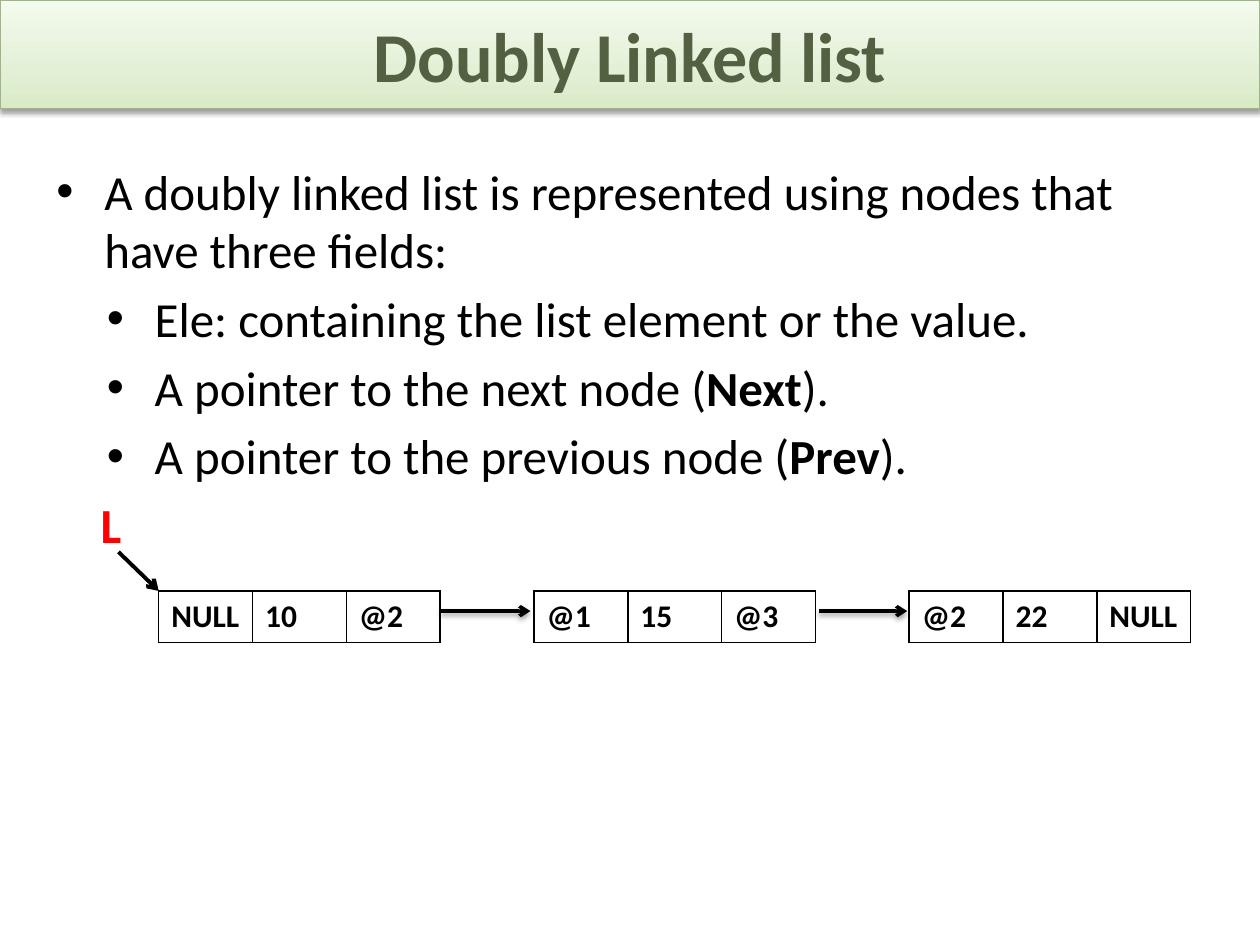
from copy import deepcopy
from lxml.etree import SubElement as Sub
from pptx import Presentation
from pptx.dml.color import RGBColor as RGB
from pptx.enum.shapes import MSO_CONNECTOR as Conn, MSO_SHAPE as Shape
from pptx.enum.text import MSO_ANCHOR as Anchor, PP_ALIGN as Align
from pptx.oxml.ns import qn
from pptx.util import Inches, Pt

BLACK = RGB(0, 0, 0)
RED = RGB(0xFF, 0, 0)
OLIVE = RGB(0x53, 0x61, 0x42)
EDGE = RGB(0xA1, 0xB2, 0x8E)
STOPS = [
    (0, RGB(0xD9, 0xEA, 0xC6)),
    (0.35, RGB(0xE3, 0xF0, 0xD6)),
    (1, RGB(0xF4, 0xFA, 0xEF)),
]
BASE = {"name": "Calibri", "size": Pt(28), "bold": False}
BOLD = {"bold": True}
HEAD = {"size": Pt(40), "bold": True}
CELL = {"size": Pt(18), "bold": True}

POINTS = [
    (0.38, [("A doubly linked list is represented using nodes that have three fields:", {})]),
    (0.78, [("Ele: containing the list element or the value.", {})]),
    (0.78, [("A pointer to the next node (", {}), ("Next", BOLD), (").", {})]),
    (0.78, [("A pointer to the previous node (", {}), ("Prev", BOLD), (").", {})]),
]
NODES = [("NULL", "10", "@2"), ("@1", "15", "@3"), ("@2", "22", "NULL")]


def style(font, form, color=BLACK):
    for key, value in {**BASE, **form}.items():
        setattr(font, key, value)
    font.color.rgb = color


def write(para, text, form, color=BLACK):
    run = para.add_run()
    run.text = text
    style(run.font, form, color)


def add_shade(props):
    effects = props.find(qn("a:effectLst"))
    shade = Sub(effects, qn("a:outerShdw"), blurRad=str(Pt(3.1)),
                dist=str(Pt(1.6)), dir="5400000", rotWithShape="0")
    tint = Sub(shade, qn("a:srgbClr"), val=str(BLACK))
    Sub(tint, qn("a:alpha"), val="38000")


def fill_fade(shape):
    shape.fill.gradient()
    shape.fill.gradient_angle = 90
    stops = shape._element.spPr.find(".//" + qn("a:gsLst"))
    stops.append(deepcopy(stops[-1]))
    for stop, (place, color) in zip(shape.fill.gradient_stops, STOPS):
        stop.position = place
        stop.color.rgb = color


def add_title(slide):
    bar = slide.shapes.add_shape(Shape.RECTANGLE, 0, 0, Inches(10), Inches(0.86))
    fill_fade(bar)
    bar.line.color.rgb = EDGE
    bar.line.width = Pt(0.75)
    bar.shadow.inherit = False
    add_shade(bar._element.spPr)
    frame = bar.text_frame
    frame.vertical_anchor = Anchor.MIDDLE
    para = frame.paragraphs[0]
    para.alignment = Align.CENTER
    write(para, "Doubly Linked list", HEAD, OLIVE)


def add_body(slide):
    box = slide.shapes.add_textbox(Inches(0.35), Inches(1.23), Inches(9.3), Inches(6.17))
    frame = box.text_frame
    frame.word_wrap = True
    for i, (left, parts) in enumerate(POINTS):
        para = frame.add_paragraph() if i else frame.paragraphs[0]
        props = para._p.get_or_add_pPr()
        props.set("marL", str(Inches(left)))
        props.set("indent", str(Inches(-0.38)))
        para.space_before = Pt(5.6 if i else 0)
        Sub(props, qn("a:buFont"), typeface="Arial")
        Sub(props, qn("a:buChar"), char="•")
        for text, form in parts:
            write(para, text, form)
    para = frame.add_paragraph()
    para._p.get_or_add_pPr().set("marL", str(Inches(0.35)))
    para.space_before = Pt(5.6)
    write(para, "L", BOLD, RED)


def set_edges(cell, sides):
    props = cell._tc.get_or_add_tcPr()
    for side in "LRTB":
        line = Sub(props, qn("a:ln" + side), w=str(Pt(1)))
        if side in sides:
            Sub(Sub(line, qn("a:solidFill")), qn("a:srgbClr"), val=str(BLACK))
        else:
            Sub(line, qn("a:noFill"))


def add_nodes(slide):
    texts = [*NODES[0]]
    for node in NODES[1:]:
        texts += ["", *node]
    table = slide.shapes.add_table(
        1, len(texts), Inches(1.26), Inches(4.69), Inches(8.19), Inches(0.41)).table
    table.first_row = table.horz_banding = False
    for cell, text in zip(table.rows[0].cells, texts):
        set_edges(cell, "LRTB" if text else "LR")
        cell.fill.background()
        para = cell.text_frame.paragraphs[0]
        if text:
            write(para, text, CELL)
        else:
            style(para.font, CELL)


def add_arrow(slide, start, end, width, shade=True):
    spots = [Inches(n) for n in (*start, *end)]
    arrow = slide.shapes.add_connector(Conn.STRAIGHT, *spots)
    arrow.line.color.rgb = BLACK
    arrow.line.width = Pt(width)
    Sub(arrow.line._get_or_add_ln(), qn("a:tailEnd"), type="arrow")
    props = arrow._element.spPr
    Sub(props, qn("a:effectLst"))
    if shade:
        add_shade(props)


def main():
    deck = Presentation()
    deck.slide_width, deck.slide_height = Inches(10), Inches(7.5)
    slide = deck.slides.add_slide(deck.slide_layouts[6])
    add_body(slide)
    add_title(slide)
    add_nodes(slide)
    add_arrow(slide, (0.94, 4.38), (1.26, 4.69), 2.25, shade=False)
    for left, right in [(3.5, 4.21), (6.5, 7.2)]:
        add_arrow(slide, (left, 4.85), (right, 4.85), 2)
    deck.save("out.pptx")


if __name__ == "__main__":
    main()
